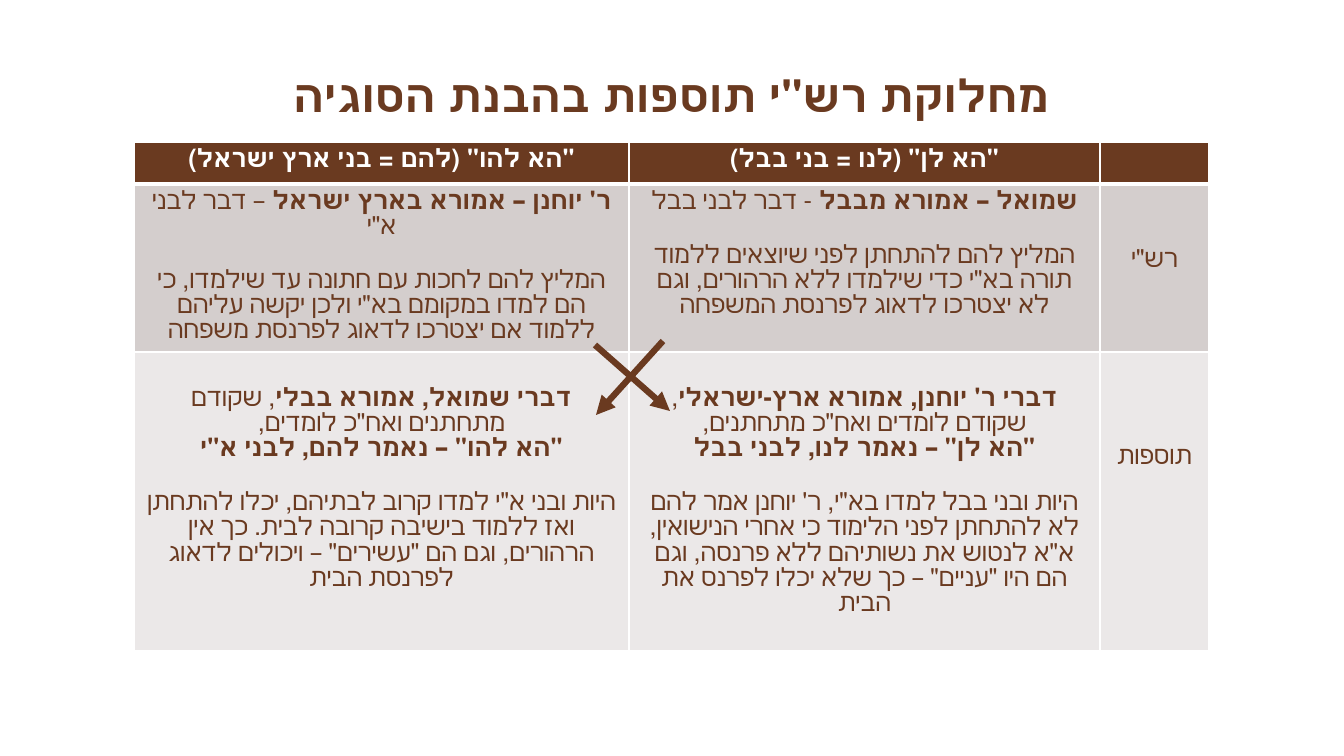
import pptx
import pptx.dml.color
import pptx.enum.shapes
import pptx.enum.text
import pptx.oxml
import pptx.oxml.ns
import pptx.util
from lxml import etree

BROWN = pptx.dml.color.RGBColor(0x6A, 0x3A, 0x20)
WHITE = pptx.dml.color.RGBColor(0xFF, 0xFF, 0xFF)
DARK_BAND = pptx.dml.color.RGBColor(0xD4, 0xCE, 0xCD)
LIGHT_BAND = pptx.dml.color.RGBColor(0xEB, 0xE8, 0xE8)

EMU_PER_PX = 914400 / 100.8
COL_WIDTHS = [495, 471, 109]
ROW_HEIGHTS = [42, 168, 299]
BLANK_LINE = 29

# Each cell: blank lines above, then groups of paragraphs; a paragraph is (bold, plain).
HEADER = [
    (0, [[('"הא להו" (להם = בני ארץ ישראל)', "")]]),
    (0, [[('"הא לן" (לנו = בני בבל)', "")]]),
    (0, []),
]
RASHI = [
    (0, [[("ר' יוחנן – אמורא בארץ ישראל ", '– דבר לבני א"י')],
         [("", 'המליץ להם לחכות עם חתונה עד שילמדו, כי הם למדו במקומם בא"י ולכן '
               'יקשה עליהם ללמוד אם יצטרכו לדאוג לפרנסת משפחה')]]),
    (0, [[("שמואל – אמורא מבבל ", "- דבר לבני בבל")],
         [("", 'המליץ להם להתחתן לפני שיוצאים ללמוד תורה בא"י כדי שילמדו ללא '
               'הרהורים, וגם לא יצטרכו לדאוג לפרנסת המשפחה')]]),
    (2, [[("", 'רש"י')]]),
]
TOSAFOT = [
    (1, [[("דברי שמואל, אמורא בבלי", ', שקודם מתחתנים ואח"כ לומדים,'),
          ('"הא להו" – נאמר להם, לבני א"י', "")],
         [("", 'היות ובני א"י למדו קרוב לבתיהם, יכלו להתחתן ואז ללמוד בישיבה קרובה '
               'לבית. כך אין הרהורים, וגם הם "עשירים" – ויכולים לדאוג לפרנסת הבית')]]),
    (1, [[("דברי ר' יוחנן, אמורא ארץ-ישראלי", ', שקודם לומדים ואח"כ מתחתנים,'),
          ('"הא לן" – נאמר לנו, לבני בבל', "")],
         [("", "היות ובני בבל למדו בא\"י, ר' יוחנן אמר להם לא להתחתן לפני הלימוד כי "
               'אחרי הנישואין, א"א לנטוש את נשותיהם ללא פרנסה, וגם הם היו "עניים" – '
               'כך שלא יכלו לפרנס את הבית')]]),
    (3, [[("", "תוספות")]]),
]
ROWS = [(HEADER, BROWN, WHITE), (RASHI, DARK_BAND, BROWN), (TOSAFOT, LIGHT_BAND, BROWN)]


def px(n):
    return pptx.util.Emu(round(n * EMU_PER_PX))


def sub(parent, tag, **attrs):
    return etree.SubElement(parent, pptx.oxml.ns.qn(tag), **attrs)


class SlideBuilder:
    font = "Cambria"

    def __init__(self, slide):
        self.slide = slide

    def paragraph(self, p, runs, size, color):
        """Fill a centred right-to-left paragraph with (text, bold) runs."""
        p.alignment = pptx.enum.text.PP_ALIGN.CENTER
        p._p.get_or_add_pPr().set("rtl", "1")
        p.font.size = pptx.util.Pt(size)
        p.font.color.rgb = color
        p.font.name = self.font
        for text, bold in runs:
            if text:
                r = p.add_run()
                r.text = text
                r.font.bold = bold

    def title(self, text, x, y, w, h):
        tf = self.slide.shapes.add_textbox(px(x), px(y), px(w), px(h)).text_frame
        tf.word_wrap = True
        tf.vertical_anchor = pptx.enum.text.MSO_ANCHOR.BOTTOM
        self.paragraph(tf.paragraphs[0], [(text, True)], 32, BROWN)

    def borders(self, cell, bottom):
        tcPr = cell._tc.get_or_add_tcPr()
        for side, width in (("L", 1), ("R", 1), ("T", 1), ("B", bottom)):
            ln = sub(tcPr, f"a:ln{side}", w=str(pptx.util.Pt(width)))
            sub(sub(ln, "a:solidFill"), "a:srgbClr", val=str(WHITE))

    def cell(self, cell, blanks, groups, fill, color, bottom):
        self.borders(cell, bottom)
        cell.fill.solid()
        cell.fill.fore_color.rgb = fill
        cell.margin_left = cell.margin_right = px(10)
        cell.margin_top = px(5 + blanks * BLANK_LINE)
        cell.margin_bottom = px(5)
        tf = cell.text_frame
        p = None
        for group in groups:
            for i, (bold, plain) in enumerate(group):
                first = p is None
                p = tf.paragraphs[0] if first else tf.add_paragraph()
                p.line_spacing = pptx.util.Pt(18)
                if i == 0 and not first:
                    p.space_before = px(BLANK_LINE)
                self.paragraph(p, [(bold, True), (plain, False)], 18, color)

    def table(self, x, y):
        table = self.slide.shapes.add_table(
            len(ROW_HEIGHTS), len(COL_WIDTHS), px(x), px(y),
            px(sum(COL_WIDTHS)), px(sum(ROW_HEIGHTS))).table
        for col, width in zip(table.columns, COL_WIDTHS):
            col.width = px(width)
        for i, (cells, fill, color) in enumerate(ROWS):
            table.rows[i].height = px(ROW_HEIGHTS[i])
            for j, (blanks, groups) in enumerate(cells):
                self.cell(table.cell(i, j), blanks, groups, fill, color,
                          3 if i == 0 else 1)

    def arrow(self, x1, y1, x2, y2):
        sp = self.slide.shapes.add_connector(
            pptx.enum.shapes.MSO_CONNECTOR.STRAIGHT, px(x1), px(y1), px(x2), px(y2))
        sp.line.color.rgb = BROWN
        sp.line.width = pptx.util.Pt(4.5)
        sub(sp.line._get_or_add_ln(), "a:tailEnd", type="triangle")
        sub(sp._element.spPr, "a:effectLst")


def main():
    prs = pptx.Presentation()
    prs.slide_width, prs.slide_height = px(1344), px(756)
    s = SlideBuilder(prs.slides.add_slide(prs.slide_layouts[6]))
    s.title('מחלוקת רש"י תוספות בהבנת הסוגיה', 134, 47, 1075, 79)
    s.table(134, 142)
    s.arrow(595, 345, 670, 411)
    s.arrow(663, 341, 596, 415)
    prs.save("out.pptx")


if __name__ == "__main__":
    main()
